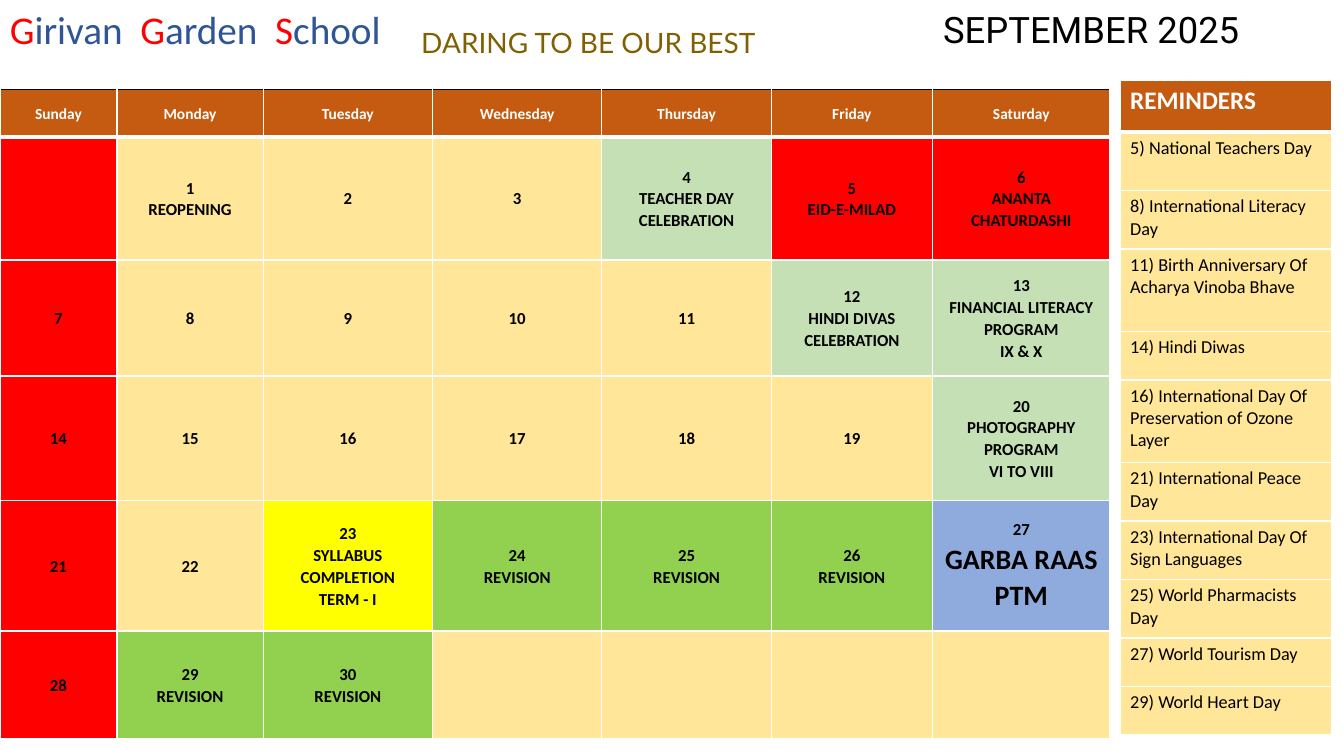
from pptx import Presentation
from pptx.dml.color import RGBColor
from pptx.enum.text import MSO_ANCHOR, MSO_AUTO_SIZE, PP_ALIGN
from pptx.oxml import parse_xml
from pptx.oxml.ns import nsdecls
from pptx.util import Inches, Pt

WHITE = RGBColor(0xFF, 0xFF, 0xFF)
BLACK = RGBColor(0, 0, 0)
RUST = RGBColor(0xC5, 0x5A, 0x11)
RED = RGBColor(0xFF, 0, 0)
SAND = RGBColor(0xFF, 0xE6, 0x99)
MINT = RGBColor(0xC5, 0xE0, 0xB4)
GREEN = RGBColor(0x92, 0xD0, 0x50)
YELLOW = RGBColor(0xFF, 0xFF, 0)
BLUE = RGBColor(0x8F, 0xAA, 0xDC)
NAVY = RGBColor(0x2F, 0x55, 0x97)
OLIVE = RGBColor(0x80, 0x60, 0)

HEADINGS = ["Sunday", "Monday", "Tuesday", "Wednesday", "Thursday", "Friday", "Saturday"]
COLUMN_WIDTHS = [1.16, 1.45, 1.68, 1.68, 1.68, 1.6, 1.76]
ROW_HEIGHTS = [0.47, 1.22, 1.15, 1.24, 1.29, 1.07]
LAST_DAY = 30
EVENTS = {
    1: ("REOPENING", SAND),
    4: ("TEACHER DAY CELEBRATION", MINT),
    5: ("EID-E-MILAD", RED),
    6: ("ANANTA CHATURDASHI", RED),
    12: ("HINDI DIVAS CELEBRATION", MINT),
    13: ("FINANCIAL LITERACY PROGRAM\nIX & X", MINT),
    20: ("PHOTOGRAPHY PROGRAM\nVI TO VIII", MINT),
    23: ("SYLLABUS COMPLETION\nTERM - I", YELLOW),
    27: ("GARBA RAAS\nPTM", BLUE),
}
for revision_day in (24, 25, 26, 29, 30):
    EVENTS[revision_day] = ("REVISION", GREEN)
LARGE_LINES = ("GARBA RAAS", "PTM")

REMINDERS = [
    ("5) National Teachers Day", 0.58),
    ("8) International Literacy Day", 0.58),
    ("11) Birth Anniversary Of Acharya Vinoba Bhave", 0.82),
    ("14) Hindi Diwas", 0.48),
    ("16) International Day Of Preservation of Ozone Layer", 0.82),
    ("21) International Peace Day", 0.58),
    ("23) International Day Of Sign Languages", 0.58),
    ("25) World Pharmacists Day", 0.58),
    ("27) World Tourism Day", 0.48),
    ("29) World Heart Day", 0.48),
]


def write_text(paragraph, text, size, color, font="Calibri", bold=False,
               align=PP_ALIGN.LEFT, line_spacing=1.0):
    """Add one formatted run to the paragraph."""
    paragraph.alignment = align
    paragraph.line_spacing = line_spacing
    run = paragraph.add_run()
    run.text = text
    run.font.size = Pt(size)
    run.font.name = font
    run.font.bold = bold
    run.font.color.rgb = color


def paint_cell(cell, fill, top=WHITE, bottom_width=1):
    """Give the cell its borders, then its fill, in schema order."""
    properties = cell._tc.get_or_add_tcPr()
    for side, color, width in (("L", WHITE, 1), ("R", WHITE, 1),
                               ("T", top, 1), ("B", WHITE, bottom_width)):
        properties.append(parse_xml(
            f'<a:ln{side} {nsdecls("a")} w="{Pt(width)}"><a:solidFill>'
            f'<a:srgbClr val="{color}"/></a:solidFill></a:ln{side}>'))
    cell.fill.solid()
    cell.fill.fore_color.rgb = fill


presentation = Presentation()
presentation.slide_width = Inches(13.33)
presentation.slide_height = Inches(7.5)
slide = presentation.slides.add_slide(presentation.slide_layouts[5])

# Month title
title = slide.shapes.title
title.left, title.top = Inches(8.83), Inches(0)
title.width, title.height = Inches(3.99), Inches(0.55)
title.fill.solid()
title.fill.fore_color.rgb = WHITE
title.text_frame.auto_size = MSO_AUTO_SIZE.NONE
title.text_frame.vertical_anchor = MSO_ANCHOR.MIDDLE
title_paragraph = title.text_frame.paragraphs[0]
title_paragraph.space_after = Pt(8)
write_text(title_paragraph, "SEPTEMBER 2025", 26, BLACK, font="Roboto",
           align=PP_ALIGN.CENTER, line_spacing=1.07)

# School name and motto
school = slide.shapes.add_textbox(Inches(0), Inches(0), Inches(4.08), Inches(0.51))
school.text_frame.word_wrap = True
for word in ("Girivan  ", "Garden  ", "School"):
    school_paragraph = school.text_frame.paragraphs[0]
    write_text(school_paragraph, word[0], 28, RED)
    write_text(school_paragraph, word[1:], 28, NAVY)

motto = slide.shapes.add_textbox(Inches(4.08), Inches(0.2), Inches(4.43), Inches(0.44))
motto.text_frame.word_wrap = True
motto.text_frame.auto_size = MSO_AUTO_SIZE.SHAPE_TO_FIT_TEXT
write_text(motto.text_frame.paragraphs[0], "DARING TO BE OUR BEST", 20, OLIVE, font="Lato")

# Month calendar
calendar = slide.shapes.add_table(len(ROW_HEIGHTS), len(HEADINGS), Inches(0), Inches(0.89),
                                  Inches(11.02), Inches(6.44)).table
calendar.horz_banding = False
for column, width in zip(calendar.columns, COLUMN_WIDTHS):
    column.width = Inches(width)
for row_index, height in enumerate(ROW_HEIGHTS):
    calendar.rows[row_index].height = Inches(height)
    for column_index, heading in enumerate(HEADINGS):
        cell = calendar.cell(row_index, column_index)
        cell.vertical_anchor = MSO_ANCHOR.MIDDLE
        cell.margin_left = cell.margin_right = Inches(0.07)
        cell.margin_top = cell.margin_bottom = 0
        if row_index == 0:
            paint_cell(cell, RUST, top=BLACK, bottom_width=3)
            write_text(cell.text_frame.paragraphs[0], heading, 11, WHITE, bold=True,
                       align=PP_ALIGN.CENTER, line_spacing=1.07)
            continue
        day = (row_index - 1) * 7 + column_index
        event, fill = EVENTS.get(day, ("", RED if column_index == 0 else SAND))
        paint_cell(cell, fill)
        if not 1 <= day <= LAST_DAY:
            continue
        lines = [str(day)] + event.splitlines()
        for line_index, line in enumerate(lines):
            frame = cell.text_frame
            paragraph = frame.add_paragraph() if line_index else frame.paragraphs[0]
            write_text(paragraph, line, 20 if line in LARGE_LINES else 12, BLACK, bold=True,
                       align=PP_ALIGN.CENTER, line_spacing=1.07)

# Reminder list
reminders = slide.shapes.add_table(len(REMINDERS) + 1, 1, Inches(11.11), Inches(0.8),
                                   Inches(2.1), Inches(6.51)).table
reminders.horz_banding = False
reminders.rows[0].height = Inches(0.51)
reminder_heading = reminders.cell(0, 0)
paint_cell(reminder_heading, RUST, bottom_width=3)
write_text(reminder_heading.text_frame.paragraphs[0], "REMINDERS", 18, WHITE, bold=True)
for row_index, (reminder, height) in enumerate(REMINDERS, start=1):
    reminders.rows[row_index].height = Inches(height)
    cell = reminders.cell(row_index, 0)
    paint_cell(cell, SAND)
    write_text(cell.text_frame.paragraphs[0], reminder, 13, BLACK)

presentation.save("out.pptx")
